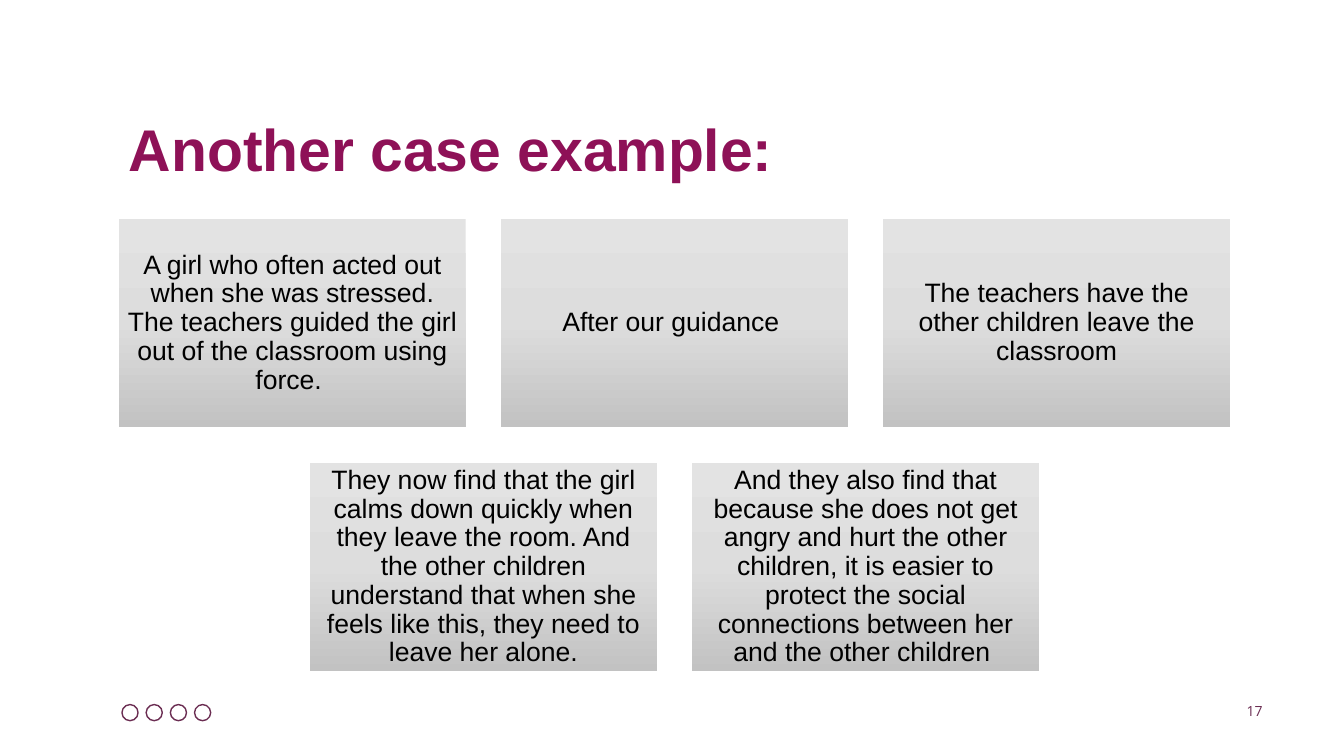
from copy import deepcopy

from pptx import Presentation
from pptx.dml.color import RGBColor
from pptx.enum.shapes import MSO_SHAPE
from pptx.enum.text import MSO_ANCHOR, PP_ALIGN
from pptx.oxml.ns import qn
from pptx.util import Inches, Pt

RECTANGLE, OVAL = MSO_SHAPE.RECTANGLE, MSO_SHAPE.OVAL
TOP, MIDDLE, BOTTOM = MSO_ANCHOR.TOP, MSO_ANCHOR.MIDDLE, MSO_ANCHOR.BOTTOM
LEFT, CENTER, RIGHT = PP_ALIGN.LEFT, PP_ALIGN.CENTER, PP_ALIGN.RIGHT

MAGENTA = RGBColor(0x8E, 0x11, 0x57)
PLUM = RGBColor(0x6B, 0x2D, 0x52)
BLACK = RGBColor(0, 0, 0)
CARD_STOPS = [
    (0, RGBColor(0xE3, 0xE3, 0xE3)),
    (0.5, RGBColor(0xDD, 0xDD, 0xDD)),
    (1, RGBColor(0xC2, 0xC2, 0xC2)),
]

TITLE_FONT = {"name": "Arial", "size": Pt(42), "bold": True}
CARD_FONT = {"name": "Arial", "size": Pt(19)}
NUMBER_FONT = {"name": "Open Sans", "size": Pt(10)}

CARD_WIDTH, CARD_HEIGHT, CARD_GAP = 3.44, 2.07, 0.35
CARD_ROWS = [
    [
        "A girl who often acted out when she was stressed. The teachers guided "
        "the girl out of the classroom using force. ",
        "After our guidance ",
        "The teachers have the other children leave the classroom",
    ],
    [
        "They now find that the girl calms down quickly when they leave the room. "
        "And the other children understand that when she feels like this, they "
        "need to leave her alone.",
        "And they also find that because she does not get angry and hurt the other "
        "children, it is easier to protect the social connections between her and "
        "the other children ",
    ],
]


def write_text(shape, text, font, color, alignment, anchor, margins, spacing=0.9):
    frame = shape.text_frame
    horizontal, vertical = margins
    frame_format = {
        "word_wrap": True,
        "vertical_anchor": anchor,
        "margin_left": Inches(horizontal),
        "margin_right": Inches(horizontal),
        "margin_top": Inches(vertical),
        "margin_bottom": Inches(vertical),
    }
    for name, value in frame_format.items():
        setattr(frame, name, value)
    paragraph = frame.paragraphs[0]
    paragraph.alignment = alignment
    paragraph.line_spacing = spacing
    run = paragraph.add_run()
    run.text = text
    for name, value in font.items():
        setattr(run.font, name, value)
    run.font.color.rgb = color


def fill_card(card):
    card.fill.gradient()
    card.fill.gradient_angle = 270
    stop_list = card.element.spPr.find(qn("a:gradFill")).find(qn("a:gsLst"))
    stop_list.append(deepcopy(stop_list[0]))
    for stop, (position, color) in zip(card.fill.gradient_stops, CARD_STOPS):
        stop.position = position
        stop.color.rgb = color


def add_title(slide, left, top, width, height):
    title = slide.shapes.add_textbox(*map(Inches, (left, top, width, height)))
    write_text(title, "Another case example:", TITLE_FONT, MAGENTA, LEFT, TOP, (0.1, 0.05))


def add_cards(slide, left, top, width):
    for row, texts in enumerate(CARD_ROWS):
        row_width = len(texts) * (CARD_WIDTH + CARD_GAP) - CARD_GAP
        row_left = left + (width - row_width) / 2
        card_top = top + row * (CARD_HEIGHT + CARD_GAP)
        for column, text in enumerate(texts):
            card_left = row_left + column * (CARD_WIDTH + CARD_GAP)
            box = map(Inches, (card_left, card_top, CARD_WIDTH, CARD_HEIGHT))
            card = slide.shapes.add_shape(RECTANGLE, *box)
            card.shadow.inherit = False
            card.line.fill.background()
            fill_card(card)
            write_text(card, text, CARD_FONT, BLACK, CENTER, MIDDLE, (0.08, 0.08))


def add_footer(slide, left, top, width, height):
    for index in range(4):
        box = map(Inches, (left + index * 0.24, top + 0.2, 0.16, 0.16))
        circle = slide.shapes.add_shape(OVAL, *box)
        circle.shadow.inherit = False
        circle.fill.background()
        circle.line.color.rgb = PLUM
        circle.line.width = Pt(1)
    number_width = 0.88
    box = map(Inches, (left + width - number_width, top, number_width, height))
    number = slide.shapes.add_textbox(*box)
    write_text(number, "17", NUMBER_FONT, PLUM, RIGHT, BOTTOM, (0.1, 0.05), 1.0)


def main():
    presentation = Presentation()
    presentation.slide_width = Inches(13.33)
    presentation.slide_height = Inches(7.5)
    slide = presentation.slides.add_slide(presentation.slide_layouts[6])
    add_footer(slide, 1.21, 6.79, 11.41, 0.4)
    add_title(slide, 1.18, 1.15, 11.02, 0.78)
    add_cards(slide, 1.18, 2.17, 11.02)
    presentation.save("out.pptx")


if __name__ == "__main__":
    main()
